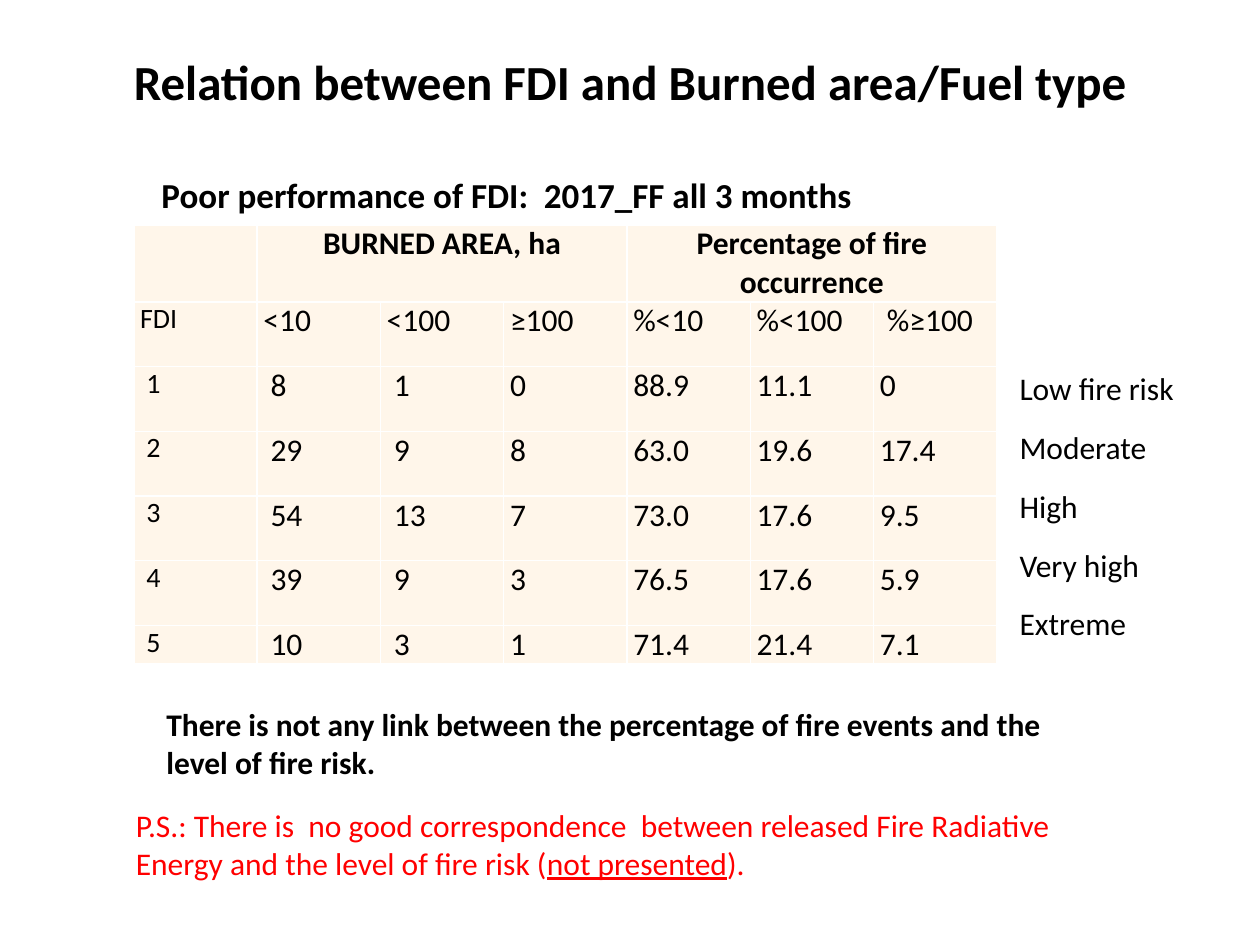
"""Build a slide that relates the fire danger index to burned area."""
from dataclasses import dataclass, field

from lxml.etree import SubElement
from pptx import Presentation
from pptx.dml.color import RGBColor as RGB
from pptx.enum.text import MSO_ANCHOR as Anchor, PP_ALIGN as Align
from pptx.oxml.ns import qn
from pptx.util import Pt


@dataclass(frozen=True)
class Theme:
    font: str = "Calibri"
    ink: RGB = RGB(0x00, 0x00, 0x00)
    alert: RGB = RGB(0xFF, 0x00, 0x00)
    cell: RGB = RGB(0xFF, 0xF6, 0xEA)
    border: RGB = RGB(0xFF, 0xFF, 0xFF)
    title: int = 28
    subtitle: int = 20
    body: int = 18
    index: int = 16


THEME = Theme()


@dataclass(frozen=True)
class Note:
    box: tuple[float, float, float, float]
    paragraphs: list[list[str]]
    size: int = THEME.body
    color: RGB = THEME.ink
    bold: bool = False
    align: Align = Align.LEFT
    anchor: Anchor = Anchor.TOP
    margins: tuple[float, float] = (7.2, 3.6)
    space_after: float = 0
    wrap: bool = True
    underlined: set[str] = field(default_factory=set)


@dataclass(frozen=True)
class Group:
    column: int
    span: int
    label: str


RISK_LEVELS = ["Low fire risk", "Moderate", "High", "Very high", "Extreme"]
NOTES = [
    Note((54, 26, 612, 40), [["Relation between FDI and Burned area/Fuel type"]],
         size=THEME.title, bold=True, align=Align.CENTER, anchor=Anchor.MIDDLE),
    Note((70.5, 457, 538.5, 51),
         [["P.S.: There is  no good correspondence  between released Fire Radiative "
           "Energy and the level of fire risk (", "not presented", ")."]],
         color=THEME.alert, underlined={"not presented"}),
    Note((88, 96.5, 499, 29), [["Poor performance of FDI:  2017_FF all 3 months"]],
         size=THEME.subtitle, bold=True, anchor=Anchor.MIDDLE, margins=(4.3, 2.2)),
    Note((575.5, 207.5, 103.5, 165), [[level] for level in RISK_LEVELS],
         space_after=12, wrap=False),
    Note((88, 399.5, 538.5, 51),
         [["There is not any link between the percentage of fire events "
           "and the level of fire risk."]], bold=True),
]

GROUPS = [Group(1, 3, "BURNED AREA, ha"), Group(4, 3, "Percentage of fire occurrence")]
ROWS = [
    ["FDI", "<10", "<100", "≥100", "%<10", "%<100", " %≥100"],
    [" 1", " 8", " 1", "0", "88.9", "11.1", "0"],
    [" 2", " 29", " 9", "8", "63.0", "19.6", "17.4"],
    [" 3", " 54", " 13", "7", "73.0", "17.6", "9.5"],
    [" 4", " 39", " 9", "3", "76.5", "17.6", "5.9"],
    [" 5", " 10", " 3", "1", "71.4", "21.4", "7.1"],
]
TABLE_LEFT, TABLE_TOP, COLUMN_WIDTH = 76.5, 128.5, 70.45
ROW_HEIGHTS = [43] + [37] * 5 + [21]


def set_font(p, size: int, color: RGB = THEME.ink, bold: bool = False) -> None:
    """Set the shared font of a paragraph."""
    p.font.name = THEME.font
    p.font.size = Pt(size)
    p.font.bold = bold
    p.font.color.rgb = color


def add_note(s, note: Note) -> None:
    """Add a text box to the slide."""
    tf = s.shapes.add_textbox(*map(Pt, note.box)).text_frame
    tf.word_wrap = note.wrap
    tf.vertical_anchor = note.anchor
    tf.margin_left = tf.margin_right = Pt(note.margins[0])
    tf.margin_top = tf.margin_bottom = Pt(note.margins[1])
    for i, texts in enumerate(note.paragraphs):
        p = tf.add_paragraph() if i else tf.paragraphs[0]
        p.alignment = note.align
        p.space_after = Pt(note.space_after)
        set_font(p, note.size, note.color, note.bold)
        for text in texts:
            r = p.add_run()
            r.text = text
            if text in note.underlined:
                r.font.underline = True


def style_cell(cell) -> None:
    """Give a cell its borders, fill and margins."""
    tc_pr = cell._tc.get_or_add_tcPr()
    for side in ("lnL", "lnR", "lnT", "lnB"):
        ln = SubElement(tc_pr, qn(f"a:{side}"), w=str(Pt(1)))
        fill = SubElement(ln, qn("a:solidFill"))
        SubElement(fill, qn("a:srgbClr"), val=str(THEME.border))
    cell.fill.solid()
    cell.fill.fore_color.rgb = THEME.cell
    cell.margin_left = cell.margin_right = Pt(3.6)
    cell.margin_top = cell.margin_bottom = Pt(0)


def write_cell(cell, text: str, size: int, bold: bool = False,
               align: Align = Align.LEFT) -> None:
    """Write one paragraph into a cell."""
    p = cell.text_frame.paragraphs[0]
    p.add_run().text = text
    p.alignment = align
    set_font(p, size, bold=bold)


def add_fire_table(s) -> None:
    """Add the table of fire counts and percentages by index."""
    columns = len(ROWS[0])
    table = s.shapes.add_table(
        len(ROW_HEIGHTS), columns, Pt(TABLE_LEFT), Pt(TABLE_TOP),
        Pt(COLUMN_WIDTH * columns), Pt(sum(ROW_HEIGHTS))).table
    table.first_row = table.horz_banding = False
    for column in table.columns:
        column.width = Pt(COLUMN_WIDTH)
    for row, height in zip(table.rows, ROW_HEIGHTS):
        row.height = Pt(height)
    for cell in table.iter_cells():
        style_cell(cell)
    for group in GROUPS:
        cell = table.cell(0, group.column)
        cell.merge(table.cell(0, group.column + group.span - 1))
        write_cell(cell, group.label, THEME.body, bold=True, align=Align.CENTER)
    for i, row in enumerate(ROWS, start=1):
        for j, text in enumerate(row):
            write_cell(table.cell(i, j), text, THEME.body if j else THEME.index)


def main() -> None:
    """Create and save the presentation."""
    prs = Presentation()
    prs.slide_width, prs.slide_height = Pt(720), Pt(540)
    s = prs.slides.add_slide(prs.slide_layouts[6])
    add_fire_table(s)
    for note in NOTES:
        add_note(s, note)
    prs.save("out.pptx")


if __name__ == "__main__":
    main()
